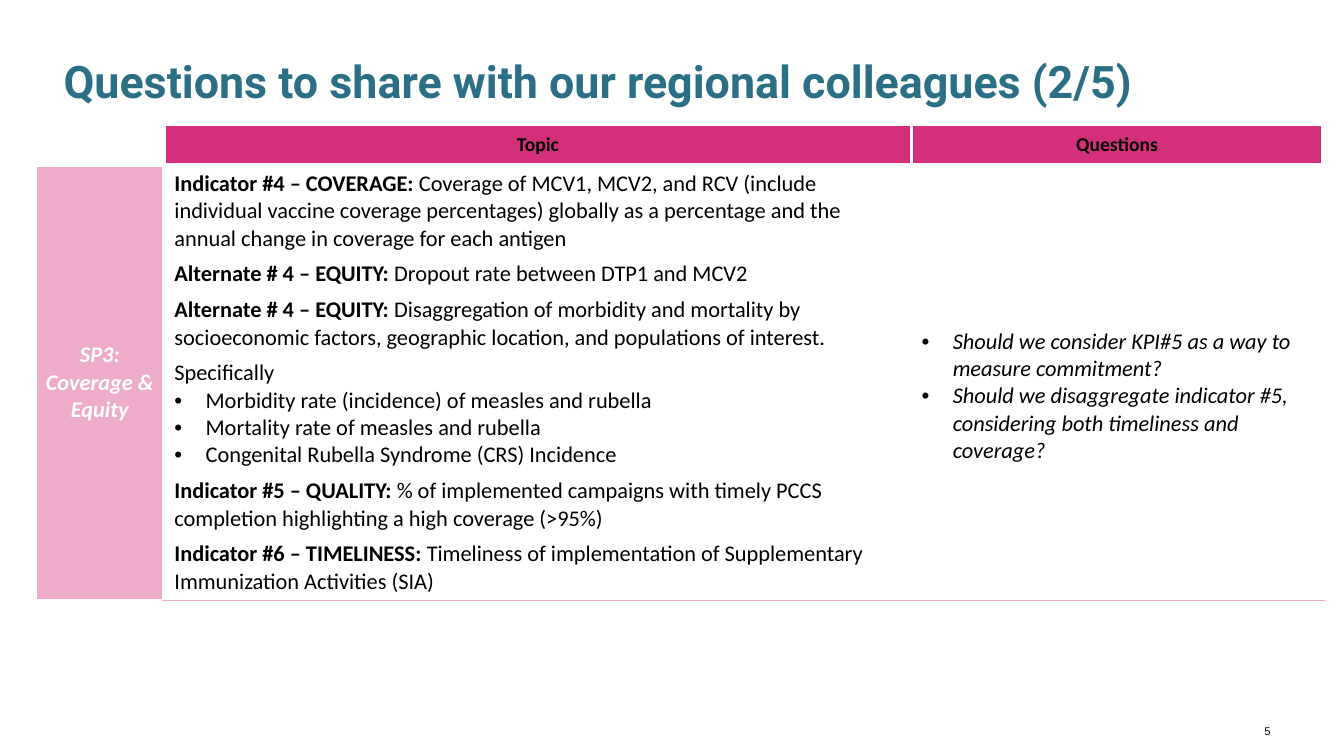
"""Build the slide of indicator topics and questions for regional colleagues."""
from lxml import etree
from pptx import Presentation
from pptx.dml.color import RGBColor
from pptx.enum.text import MSO_ANCHOR, MSO_AUTO_SIZE, PP_ALIGN
from pptx.oxml.ns import qn
from pptx.util import Inches, Pt

LEFT, CENTER, RIGHT = PP_ALIGN.LEFT, PP_ALIGN.CENTER, PP_ALIGN.RIGHT
MIDDLE, BOTTOM = MSO_ANCHOR.MIDDLE, MSO_ANCHOR.BOTTOM

TITLE = "Questions to share with our regional colleagues (2/5)"
PAGE_NUMBER = "5"
HEADERS = ["Topic", "Questions"]
STRAND = "SP3: Coverage & Equity"
# Each topic line: bold lead, text, bulleted, space after in points
TOPICS = [
    ("Indicator #4 – COVERAGE: ", "Coverage of MCV1, MCV2, and RCV (include individual vaccine "
     "coverage percentages) globally as a percentage and the annual change in coverage for "
     "each antigen", False, 6),
    ("Alternate # 4 – EQUITY: ", "Dropout rate between DTP1 and MCV2", False, 6),
    ("Alternate # 4 – EQUITY: ", "Disaggregation of morbidity and mortality by socioeconomic "
     "factors, geographic location, and populations of interest.", False, 6),
    ("", "Specifically", False, 0),
    ("", "Morbidity rate (incidence) of measles and rubella", True, 0),
    ("", "Mortality rate of measles and rubella", True, 0),
    ("", "Congenital Rubella Syndrome (CRS) Incidence", True, 6),
    ("Indicator #5 – QUALITY: ", "% of implemented campaigns with timely PCCS completion "
     "highlighting a high coverage (>95%)", False, 6),
    ("Indicator #6 – TIMELINESS: ", "Timeliness of implementation of Supplementary "
     "Immunization Activities (SIA)", False, 6),
]
QUESTIONS = [
    ("", "Should we consider KPI#5 as a way to measure commitment?", True, 0),
    ("", "Should we disaggregate indicator #5, considering both timeliness and coverage?",
     True, 0),
]
COLUMNS = [1.28, 7.41, 4.08]
ROWS = [0.34, 4.32]
WHITE, BLACK, TEAL = "FFFFFF", "000000", "2B6F86"
PINK, PALE_PINK = "D42F7B", "EEACCA"


def color(value):
    return RGBColor.from_string(value)


def style(para, name, size, ink, bold=False, italic=False, align=LEFT):
    para.alignment = align
    font = para.font
    font.name, font.size, font.bold, font.italic = name, Pt(size), bold, italic
    font.color.rgb = color(ink)


def add_bullet(para):
    props = para._p.get_or_add_pPr()
    props.set("marL", str(Inches(0.31)))
    props.set("indent", str(-Inches(0.31)))
    etree.SubElement(props, qn("a:buFont"), typeface="Arial")
    etree.SubElement(props, qn("a:buChar"), char="•")


def set_borders(cell, bottom=(WHITE, 3)):
    sides = {"L": (WHITE, 3), "R": (WHITE, 3), "T": (WHITE, 3), "B": bottom}
    props = cell._tc.get_or_add_tcPr()
    for place, (side, (ink, width)) in enumerate(sides.items()):
        line = etree.Element(qn(f"a:ln{side}"), w=str(Pt(width)))
        fill = etree.SubElement(line, qn("a:solidFill"))
        etree.SubElement(fill, qn("a:srgbClr"), val=ink)
        props.insert(place, line)


def fill_cell(cell, lines, size=16, ink=BLACK, fill=None, bottom=(WHITE, 3), **look):
    cell.vertical_anchor = MIDDLE
    if fill:
        cell.fill.solid()
        cell.fill.fore_color.rgb = color(fill)
    else:
        cell.fill.background()
    set_borders(cell, bottom)
    frame = cell.text_frame
    for number, (lead, text, bulleted, after) in enumerate(lines):
        para = frame.add_paragraph() if number else frame.paragraphs[0]
        if bulleted:
            add_bullet(para)
        style(para, "Calibri", size, ink, **look)
        para.space_after = Pt(after)
        if lead:
            span = para.add_run()
            span.text, span.font.bold = lead, True
        para.add_run().text = text


def add_title(page):
    title = page.shapes.title
    title.left, title.top, title.width, title.height = map(Inches, (0.53, 0.71, 12.15, 0.41))
    frame = title.text_frame
    frame.text, frame.auto_size, frame.vertical_anchor = TITLE, MSO_AUTO_SIZE.NONE, BOTTOM
    para = frame.paragraphs[0]
    style(para, "Roboto", 32, TEAL, bold=True)
    para.line_spacing = 0.9


def add_topic_table(page):
    table = page.shapes.add_table(len(ROWS), len(COLUMNS), Inches(0.35), Inches(1.23),
                                  Inches(sum(COLUMNS)), Inches(sum(ROWS))).table
    table.first_row = table.horz_banding = False
    for column, width in zip(table.columns, COLUMNS):
        column.width = Inches(width)
    for row, height in zip(table.rows, ROWS):
        row.height = Inches(height)
    fill_cell(table.cell(0, 0), [], 14)
    for number, header in enumerate(HEADERS, 1):
        fill_cell(table.cell(0, number), [("", header, False, 0)], 14, fill=PINK,
                  bold=True, align=CENTER)
    fill_cell(table.cell(1, 0), [("", STRAND, False, 0)], ink=WHITE, fill=PALE_PINK,
              bold=True, italic=True, align=CENTER)
    rule = (PALE_PINK, 1)
    fill_cell(table.cell(1, 1), TOPICS, bottom=rule)
    fill_cell(table.cell(1, 2), QUESTIONS, bottom=rule, italic=True)
    table.cell(1, 2).margin_top = Inches(0.32)


def add_page_number(page):
    box = page.shapes.add_textbox(*map(Inches, (12.42, 7.14, 0.28, 0.23)))
    frame = box.text_frame
    frame.text, frame.word_wrap, frame.vertical_anchor = PAGE_NUMBER, True, MIDDLE
    style(frame.paragraphs[0], "Arial", 8, BLACK, align=RIGHT)


def main():
    deck = Presentation()
    deck.slide_width, deck.slide_height = Inches(13.33), Inches(7.5)
    page = deck.slides.add_slide(deck.slide_layouts[5])
    add_topic_table(page)
    add_page_number(page)
    add_title(page)
    deck.save("out.pptx")


if __name__ == "__main__":
    main()
